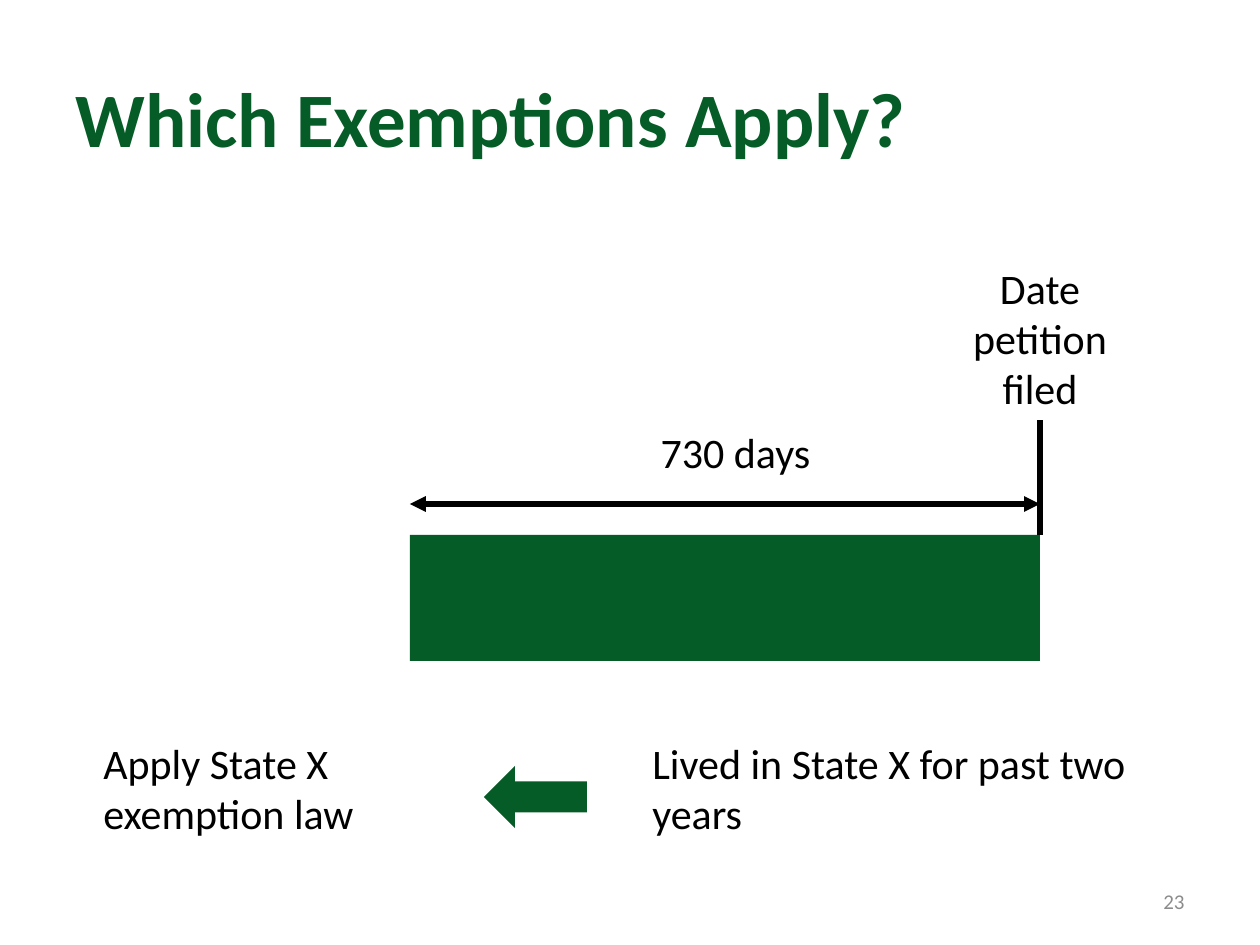
from lxml.etree import SubElement
from pptx import Presentation
from pptx.dml.color import RGBColor
from pptx.enum.shapes import MSO_CONNECTOR as Connector, MSO_SHAPE as Shape
from pptx.enum.text import MSO_ANCHOR as Anchor, PP_ALIGN as Align
from pptx.oxml.ns import qn
from pptx.util import Emu, Pt

GREEN = RGBColor(0x06, 0x5C, 0x27)
BLACK = RGBColor(0, 0, 0)
GRAY = RGBColor(0x8C, 0x8C, 0x8C)
FONT = "Calibri"
SCALE = 914400 / 126

BAR_LEFT, BAR_TOP, BAR_WIDTH, BAR_HEIGHT = 410, 535, 630, 126
BAR_RIGHT = BAR_LEFT + BAR_WIDTH
SPAN_Y = 504
LABEL_BOTTOM = 420
CAPTION_TOP, CAPTION_HEIGHT = 731, 115

TITLE = (["Which Exemptions Apply?"], (63, 38, 1134, 158),
         44, GREEN, True, Align.LEFT, Anchor.MIDDLE)
NUMBER = (["23"], (903, 876, 294, 50),
          12, GRAY, False, Align.RIGHT, Anchor.MIDDLE)
LABELS = [
    (["Date petition filed"], (935, 256, 210, 165), Align.CENTER),
    (["730 days"], (620, LABEL_BOTTOM, 231, 63), Align.CENTER),
    (["Lived in State X for past two years"],
     (640, CAPTION_TOP, 505, CAPTION_HEIGHT), Align.LEFT),
    (["Apply State X", "exemption law"],
     (91, CAPTION_TOP, 480, CAPTION_HEIGHT), Align.LEFT),
]
SHAPES = [
    (Shape.RECTANGLE, (BAR_LEFT, BAR_TOP, BAR_WIDTH, BAR_HEIGHT)),
    (Shape.LEFT_ARROW, (484, 766, 103, 62)),
]
LINES = [
    ((BAR_RIGHT, BAR_TOP), (BAR_RIGHT, LABEL_BOTTOM), False),
    ((BAR_LEFT, SPAN_Y), (BAR_RIGHT, SPAN_Y), True),
]


def px(*lengths):
    return [Emu(round(length * SCALE)) for length in lengths]


def add_text(page, lines, area, size, color, bold, align, anchor):
    frame = page.shapes.add_textbox(*px(*area)).text_frame
    frame.word_wrap = True
    frame.vertical_anchor = anchor
    frame.text = "\n".join(lines)
    for para in frame.paragraphs:
        para.alignment = align
        para.font.name = FONT
        para.font.size = Pt(size)
        para.font.bold = bold
        para.font.color.rgb = color


def add_filled(page, kind, area):
    shape = page.shapes.add_shape(kind, *px(*area))
    shape.shadow.inherit = False
    shape.fill.solid()
    shape.fill.fore_color.rgb = GREEN
    shape.line.fill.background()


def add_line(page, start, end, arrows):
    line = page.shapes.add_connector(Connector.STRAIGHT, *px(*start, *end))
    line.line.color.rgb = BLACK
    line.line.width = Pt(3)
    if arrows:
        outline = line.line._get_or_add_ln()
        for tag in ("a:headEnd", "a:tailEnd"):
            SubElement(outline, qn(tag), type="triangle")
    SubElement(line._element.spPr, qn("a:effectLst"))


def main():
    deck = Presentation()
    deck.slide_width, deck.slide_height = px(1260, 945)
    page = deck.slides.add_slide(deck.slide_layouts[6])
    add_text(page, *TITLE)
    add_text(page, *NUMBER)
    for kind, area in SHAPES:
        add_filled(page, kind, area)
    for start, end, arrows in LINES:
        add_line(page, start, end, arrows)
    for lines, area, align in LABELS:
        add_text(page, lines, area, 24, BLACK, False, align, Anchor.TOP)
    deck.save("out.pptx")


if __name__ == "__main__":
    main()
